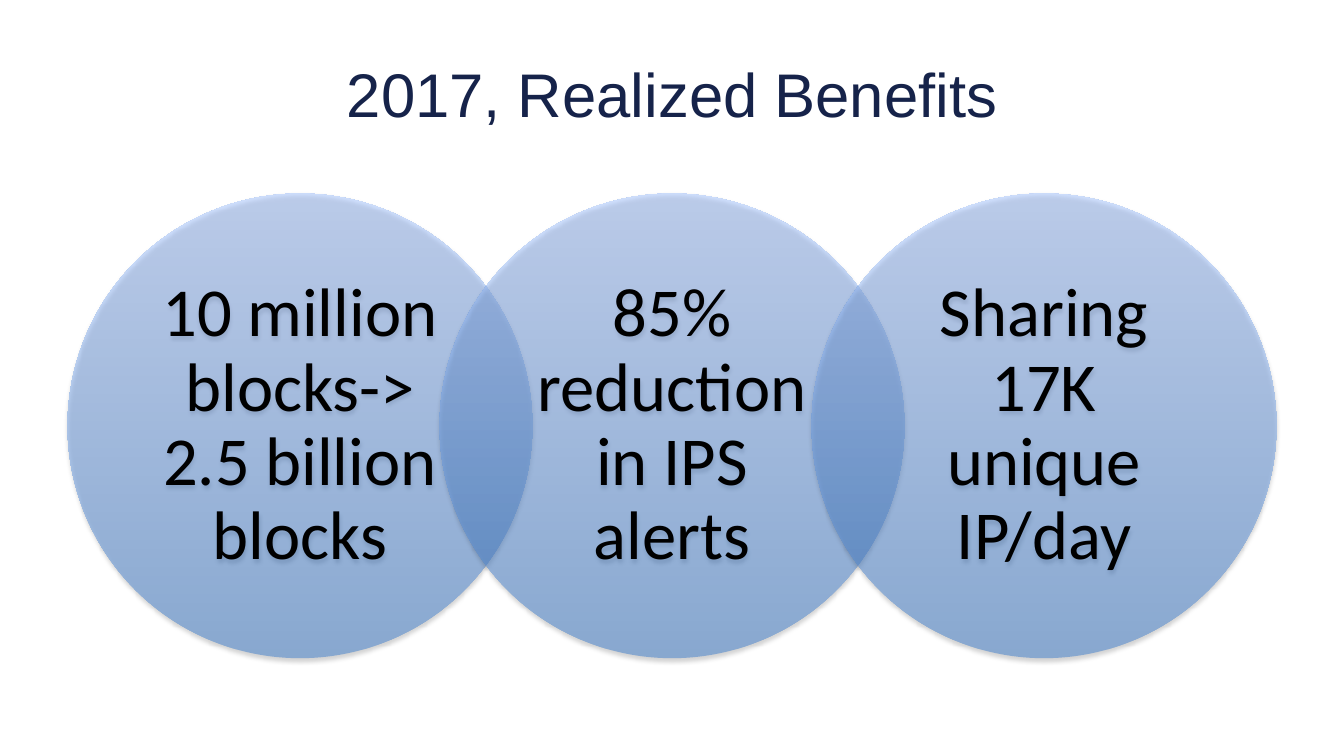
from lxml import etree
from pptx import Presentation
from pptx.dml.color import RGBColor
from pptx.enum.shapes import MSO_SHAPE
from pptx.enum.text import MSO_ANCHOR, PP_ALIGN
from pptx.oxml.ns import qn
from pptx.util import Pt

TITLE = "2017, Realized Benefits"
BENEFITS = [
    "10 million blocks-> 2.5 billion blocks",
    "85% reduction in IPS alerts",
    "Sharing 17K unique IP/day",
]
GRADIENT = ["3F7FCE", "A4C4FF"]
NAVY, BLACK = "16234A", "000000"

PX = 9144
SLIDE_W, SLIDE_H = 1333, 750
TITLE_BOX = (67, 30, 1200, 125)
CIRCLE_X, CIRCLE_Y, DIAMETER, STEP = 67, 192, 461, 369
INSET_X, INSET_Y = 25, 7

OVAL = MSO_SHAPE.OVAL
MIDDLE = MSO_ANCHOR.MIDDLE
CENTER = PP_ALIGN.CENTER


def px(n):
    return n * PX


def rgb(color):
    return RGBColor.from_string(color)


def write(sp, text, font, size, color):
    tf = sp.text_frame
    tf.word_wrap = True
    tf.vertical_anchor = MIDDLE
    p = tf.paragraphs[0]
    p.alignment = CENTER
    r = p.add_run()
    r.text = text
    r.font.name = font
    r.font.size = Pt(size)
    r.font.color.rgb = rgb(color)
    return tf, p


def add_alpha(color_element, percent):
    etree.SubElement(color_element, qn("a:alpha"), val=str(percent * 1000))


def fill_gradient(sp):
    sp.fill.gradient()
    sp.fill.gradient_angle = 90
    for stop, color in zip(sp.fill.gradient_stops, GRADIENT):
        stop.color.rgb = rgb(color)
    for stop, position in zip(sp._element.spPr.iter(qn("a:gs")), (0, 100000)):
        stop.set("pos", str(position))
        add_alpha(stop[0], 50)


def add_shadow(sp):
    sp.shadow.inherit = False
    effects = sp._element.spPr.find(qn("a:effectLst"))
    shadow = etree.SubElement(
        effects, qn("a:outerShdw"), blurRad=str(Pt(3.1)), dist=str(Pt(1.8)),
        dir="5400000", rotWithShape="0")
    add_alpha(etree.SubElement(shadow, qn("a:srgbClr"), val=BLACK), 35)


def add_circle(s, index, text):
    sp = s.shapes.add_shape(
        OVAL, px(CIRCLE_X + index * STEP), px(CIRCLE_Y), px(DIAMETER), px(DIAMETER))
    fill_gradient(sp)
    sp.line.fill.background()
    add_shadow(sp)
    tf, p = write(sp, text, "Calibri", 49, BLACK)
    tf.margin_left = tf.margin_right = px(INSET_X)
    tf.margin_top = tf.margin_bottom = px(INSET_Y)
    p.line_spacing = 0.9


def main():
    prs = Presentation()
    prs.slide_width, prs.slide_height = px(SLIDE_W), px(SLIDE_H)
    s = prs.slides.add_slide(prs.slide_layouts[5])
    title = s.shapes.title
    title.left, title.top, title.width, title.height = map(px, TITLE_BOX)
    write(title, TITLE, "Arial", 44, NAVY)
    for index, text in enumerate(BENEFITS):
        add_circle(s, index, text)
    prs.save("out.pptx")


if __name__ == "__main__":
    main()
